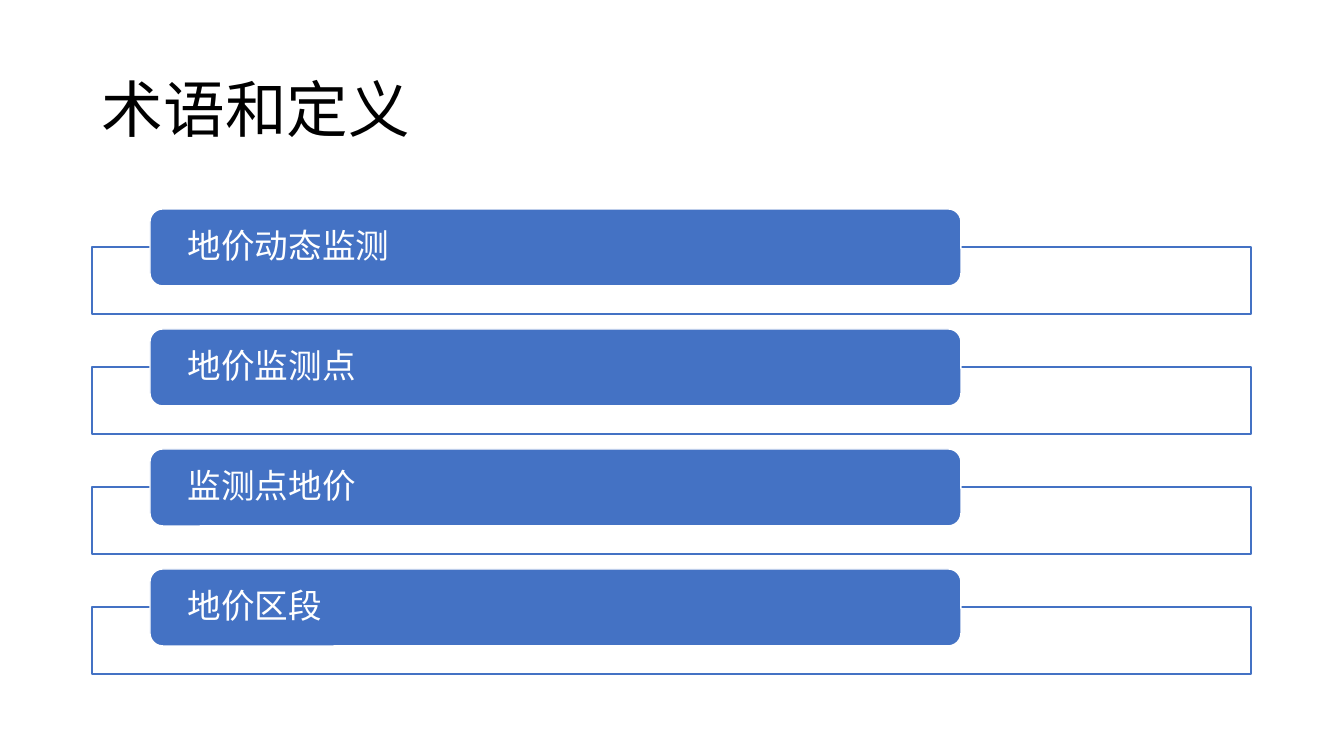
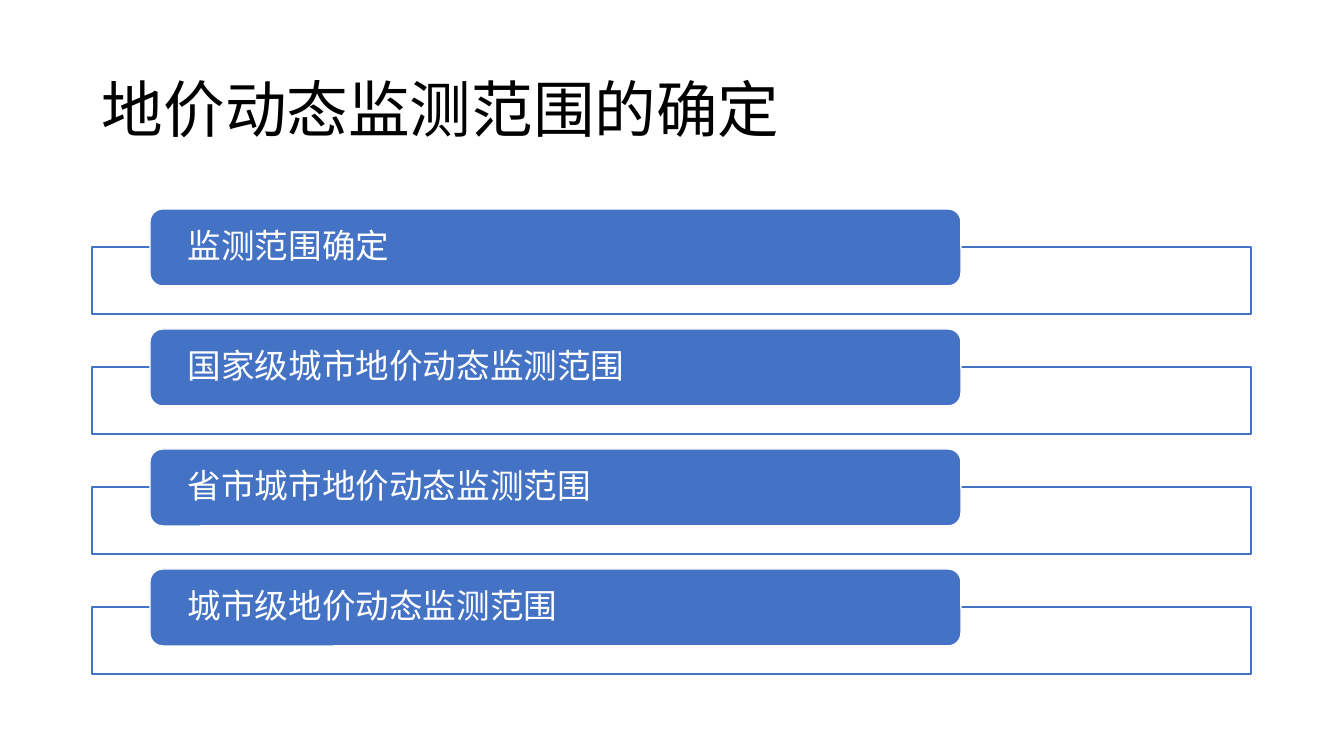
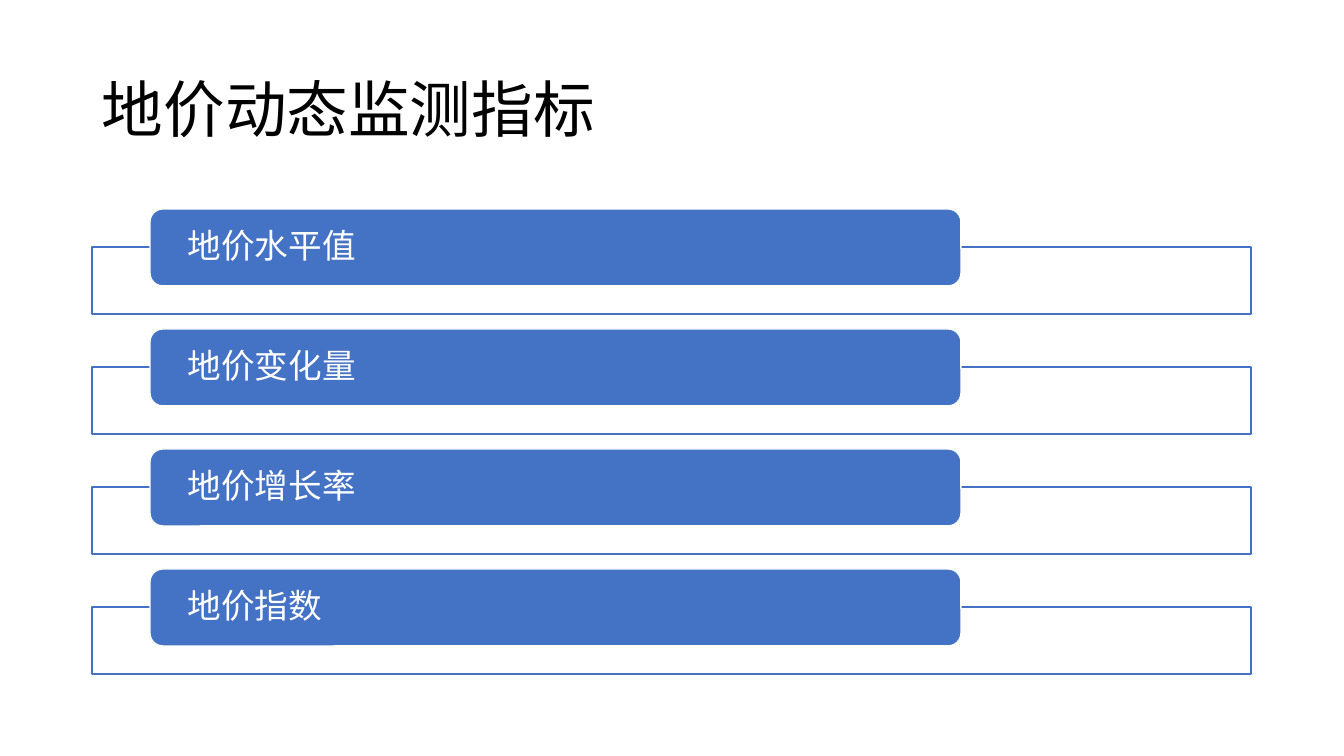
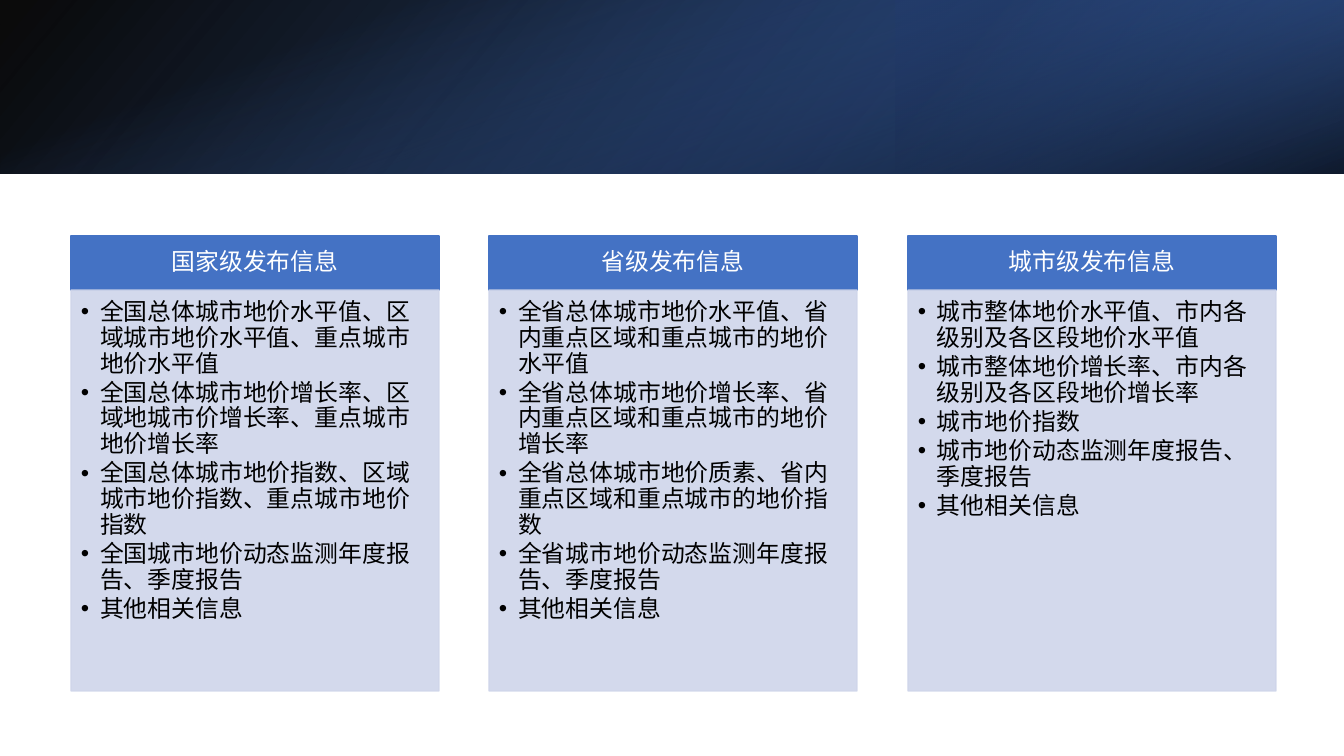
"""Build four slides on land price monitoring."""
import dataclasses

import lxml.etree
import pptx
import pptx.dml.color
import pptx.enum.shapes
import pptx.enum.text
import pptx.oxml.ns
import pptx.util


@dataclasses.dataclass(frozen=True)
class Theme:
    font: str = "Noto Sans CJK SC"
    white: str = "FFFFFF"
    black: str = "000000"
    blue: str = "4472C4"
    deep: str = "2F5597"
    navy: str = "203864"
    pale: str = "CFD5EA"
    title: int = 44
    item: int = 24
    body: int = 17


theme = Theme()
qn = pptx.oxml.ns.qn
rgb = pptx.dml.color.RGBColor.from_string
kinds = pptx.enum.shapes.MSO_SHAPE
anchors = pptx.enum.text.MSO_ANCHOR
aligns = pptx.enum.text.PP_ALIGN
PX = 914400 / 100.8


def box(page, kind, place, fill=None, line=None):
    shape = page.shapes.add_shape(kind, *(round(n * PX) for n in place))
    shape.shadow.inherit = False
    if fill:
        shape.fill.solid()
        shape.fill.fore_color.rgb = rgb(fill)
    if line:
        shape.line.color.rgb = rgb(line)
        shape.line.width = pptx.util.Pt(1)
    else:
        shape.line.fill.background()
    return shape


def write(shape, *lines, size, color, inset=(10, 5, 10, 5), align=aligns.LEFT,
          anchor=anchors.MIDDLE, bullet=None, after=0):
    frame = shape.text_frame
    frame.word_wrap = True
    frame.vertical_anchor = anchor
    (frame.margin_left, frame.margin_top, frame.margin_right,
     frame.margin_bottom) = (round(n * PX) for n in inset)
    for i, line in enumerate(lines):
        para = frame.add_paragraph() if i else frame.paragraphs[0]
        para.alignment = align
        para.line_spacing = 0.9
        para.space_after = pptx.util.Pt(after)
        run = para.add_run()
        run.text = line
        run.font.size = pptx.util.Pt(size)
        run.font.name = theme.font
        run.font.color.rgb = rgb(color)
        props = run.font._element
        lxml.etree.SubElement(props, qn("a:ea"), typeface=theme.font)
        if bullet:
            props = para._p.get_or_add_pPr()
            props.set("marL", str(round(19 * PX)))
            props.set("indent", str(round(-19 * PX)))
            lxml.etree.SubElement(props, qn("a:buFont"), typeface="Arial")
            lxml.etree.SubElement(props, qn("a:buChar"), char=bullet)


deck = pptx.Presentation()
deck.slide_width = round(1344 * PX)
deck.slide_height = round(756 * PX)
blank = deck.slide_layouts[6]

lists = {
    "术语和定义": ["地价动态监测", "地价监测点", "监测点地价", "地价区段"],
    "地价动态监测范围的确定": [
        "监测范围确定",
        "国家级城市地价动态监测范围",
        "省市城市地价动态监测范围",
        "城市级地价动态监测范围",
    ],
    "地价动态监测指标": ["地价水平值", "地价变化量", "地价增长率", "地价指数"],
}
for title, items in lists.items():
    page = deck.slides.add_slide(blank)
    head = page.shapes.add_textbox(*(round(n * PX) for n in (92, 40, 1159, 146)))
    write(head, title, size=theme.title, color=theme.black)
    for i, item in enumerate(items):
        top = 209 + 120 * i
        box(page, kinds.RECTANGLE, (92, top + 38, 1159, 67), theme.white, theme.blue)
        pill = box(page, kinds.ROUNDED_RECTANGLE, (150, top, 811, 77),
                   theme.blue, theme.white)
        write(pill, item, size=theme.item, color=theme.white, inset=(34, 0, 34, 0))

page = deck.slides.add_slide(blank)
bands = [
    ((0, 0, 1344, 174), 0, True, 140,
     [(0, theme.black, 96), (100, theme.deep, 100)]),
    ((896, 0, 448, 174), 180, True, 320,
     [(19, theme.navy, 68), (100, theme.blue, 79)]),
    ((585, -585, 174, 1344), 90, False, 340,
     [(23, theme.blue, 0), (99, theme.black, 74)]),
]
for place, turn, flip, angle, stops in bands:
    band = box(page, kinds.RECTANGLE, place)
    band.rotation = turn
    if flip:
        band._element.spPr.find(qn("a:xfrm")).set("flipH", "1")
    band.fill.gradient()
    band.fill.gradient_angle = 360 - angle
    for stop, (spot, color, _) in zip(band.fill.gradient_stops, stops):
        stop.position = spot / 100
        stop.color.rgb = rgb(color)
    for tint, (_, _, alpha) in zip(band._element.spPr.iter(qn("a:srgbClr")), stops):
        lxml.etree.SubElement(tint, qn("a:alpha"), val=str(alpha * 1000))

cards = {
    "国家级发布信息": [
        "全国总体城市地价水平值、区域城市地价水平值、重点城市地价水平值",
        "全国总体城市地价增长率、区域地城市价增长率、重点城市地价增长率",
        "全国总体城市地价指数、区域城市地价指数、重点城市地价指数",
        "全国城市地价动态监测年度报告、季度报告",
        "其他相关信息",
    ],
    "省级发布信息": [
        "全省总体城市地价水平值、省内重点区域和重点城市的地价水平值",
        "全省总体城市地价增长率、省内重点区域和重点城市的地价增长率",
        "全省总体城市地价质素、省内重点区域和重点城市的地价指数",
        "全省城市地价动态监测年度报告、季度报告",
        "其他相关信息",
    ],
    "城市级发布信息": [
        "城市整体地价水平值、市内各级别及各区段地价水平值",
        "城市整体地价增长率、市内各级别及各区段地价增长率",
        "城市地价指数",
        "城市地价动态监测年度报告、季度报告",
        "其他相关信息",
    ],
}
for i, (title, items) in enumerate(cards.items()):
    left = 71 + i * 837 // 2
    head = box(page, kinds.RECTANGLE, (left, 236, 368, 54), theme.blue, theme.blue)
    write(head, title, size=theme.body, color=theme.white,
          inset=(13, 8, 13, 8), align=aligns.CENTER)
    body = box(page, kinds.RECTANGLE, (left, 290, 368, 401), theme.pale, theme.pale)
    for tint in body._element.spPr.iter(qn("a:srgbClr")):
        lxml.etree.SubElement(tint, qn("a:alpha"), val="90000")
    write(body, *items, size=theme.body, color=theme.black, inset=(10, 10, 13, 15),
          anchor=anchors.TOP, bullet="•", after=2.5)

deck.save("out.pptx")
